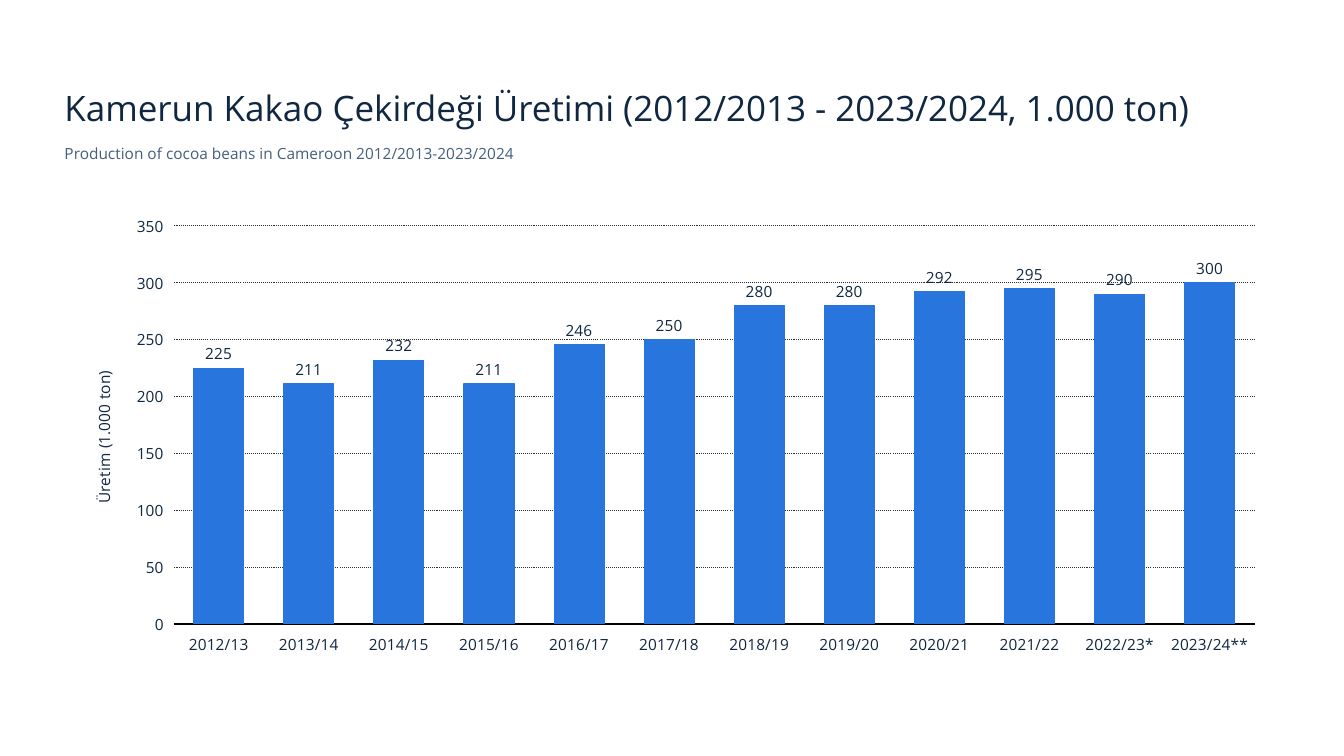
from lxml.etree import SubElement
from pptx import Presentation
from pptx.chart.data import CategoryChartData
from pptx.dml.color import RGBColor
from pptx.enum.chart import XL_CHART_TYPE, XL_LABEL_POSITION, XL_TICK_LABEL_POSITION, XL_TICK_MARK
from pptx.enum.dml import MSO_LINE
from pptx.enum.text import MSO_ANCHOR
from pptx.oxml.ns import qn
from pptx.util import Pt

NAVY = RGBColor(0x0F, 0x27, 0x41)
SLATE = RGBColor(0x45, 0x5F, 0x7C)
BLUE = RGBColor(0x28, 0x75, 0xDD)
GRID = RGBColor(0x2F, 0x2F, 0x2F)
BLACK = RGBColor(0, 0, 0)

PRODUCTION = {
    "2012/13": 225, "2013/14": 211, "2014/15": 232, "2015/16": 211,
    "2016/17": 246, "2017/18": 250, "2018/19": 280, "2019/20": 280,
    "2020/21": 292, "2021/22": 295, "2022/23*": 290, "2023/24**": 300,
}


class SlideBuilder:
    font_name = "Open Sans"
    small_size = 11

    def __init__(self, slide):
        self.slide = slide

    def style_font(self, font, size=small_size, color=NAVY):
        font.name = self.font_name
        font.size = Pt(size)
        font.bold = False
        font.color.rgb = color

    def add_text(self, text, left, top, width, height, size, color, anchor):
        box = self.slide.shapes.add_textbox(Pt(left), Pt(top), Pt(width), Pt(height))
        frame = box.text_frame
        frame.word_wrap = True
        frame.vertical_anchor = anchor
        frame.text = text
        self.style_font(frame.paragraphs[0].runs[0].font, size, color)

    def place(self, element, index, **fractions):
        for old_layout in element.findall(qn("c:layout")):
            element.remove(old_layout)
        layout = SubElement(element, qn("c:layout"))
        element.insert(index, layout)
        manual = SubElement(layout, qn("c:manualLayout"))
        if "w" in fractions:
            SubElement(manual, qn("c:layoutTarget")).set("val", "inner")
        for side in ("x", "y"):
            SubElement(manual, qn(f"c:{side}Mode")).set("val", "edge")
        for name, fraction in fractions.items():
            SubElement(manual, qn(f"c:{name}")).set("val", str(fraction))

    def style_axis(self, axis):
        axis.major_tick_mark = XL_TICK_MARK.NONE
        axis.minor_tick_mark = XL_TICK_MARK.NONE
        axis.tick_label_position = XL_TICK_LABEL_POSITION.LOW
        self.style_font(axis.tick_labels.font)

    def add_column_chart(self, values, axis_title, left, top, width, height):
        data = CategoryChartData()
        data.categories = list(values)
        data.add_series("Series 1", list(values.values()))
        chart = self.slide.shapes.add_chart(
            XL_CHART_TYPE.COLUMN_CLUSTERED, Pt(left), Pt(top), Pt(width), Pt(height), data
        ).chart
        chart.has_legend = False
        chart.has_title = False
        self.style_font(chart.font)

        category_axis = chart.category_axis
        self.style_axis(category_axis)
        category_axis.format.line.color.rgb = BLACK
        category_axis.format.line.width = Pt(2)

        value_axis = chart.value_axis
        self.style_axis(value_axis)
        value_axis.minimum_scale = 0
        value_axis.maximum_scale = 350
        value_axis.major_unit = 50
        value_axis.tick_labels.number_format = "#,##0"
        value_axis.tick_labels.number_format_is_linked = False
        value_axis.format.line.fill.background()
        gridline = value_axis.major_gridlines.format.line
        gridline.color.rgb = GRID
        gridline.width = Pt(0.75)
        gridline.dash_style = MSO_LINE.ROUND_DOT
        title_frame = value_axis.axis_title.text_frame
        title_frame.text = axis_title
        self.style_font(title_frame.paragraphs[0].runs[0].font)

        plot = chart.plots[0]
        plot.gap_width = 80
        plot.overlap = -30
        plot.vary_by_categories = False
        series = plot.series[0]
        series.format.fill.solid()
        series.format.fill.fore_color.rgb = BLUE
        series.format.line.color.rgb = BLUE
        series.format.line.width = Pt(0.75)
        plot.has_data_labels = True
        labels = plot.data_labels
        labels.show_value = True
        labels.position = XL_LABEL_POSITION.OUTSIDE_END
        self.style_font(labels.font)

        plot_area = chart._chartSpace.chart.plotArea
        self.place(plot_area, 0, x=0.09, y=0.04, w=0.89, h=0.87)
        self.place(value_axis.axis_title._element, 1, x=0.02, y=0.35)


def main():
    presentation = Presentation()
    presentation.slide_width = Pt(960)
    presentation.slide_height = Pt(540)
    builder = SlideBuilder(presentation.slides.add_slide(presentation.slide_layouts[6]))
    builder.add_column_chart(PRODUCTION, "Üretim (1.000 ton)", 46, 148.3, 867.6, 326.9)
    builder.add_text(
        "Kamerun Kakao Çekirdeği Üretimi (2012/2013 - 2023/2024, 1.000 ton)",
        39, 33, 881, 62, 25, NAVY, MSO_ANCHOR.BOTTOM,
    )
    builder.add_text(
        "Production of cocoa beans in Cameroon 2012/2013-2023/2024",
        39, 99.4, 881, 24.5, 11, SLATE, MSO_ANCHOR.TOP,
    )
    presentation.save("out.pptx")


if __name__ == "__main__":
    main()
